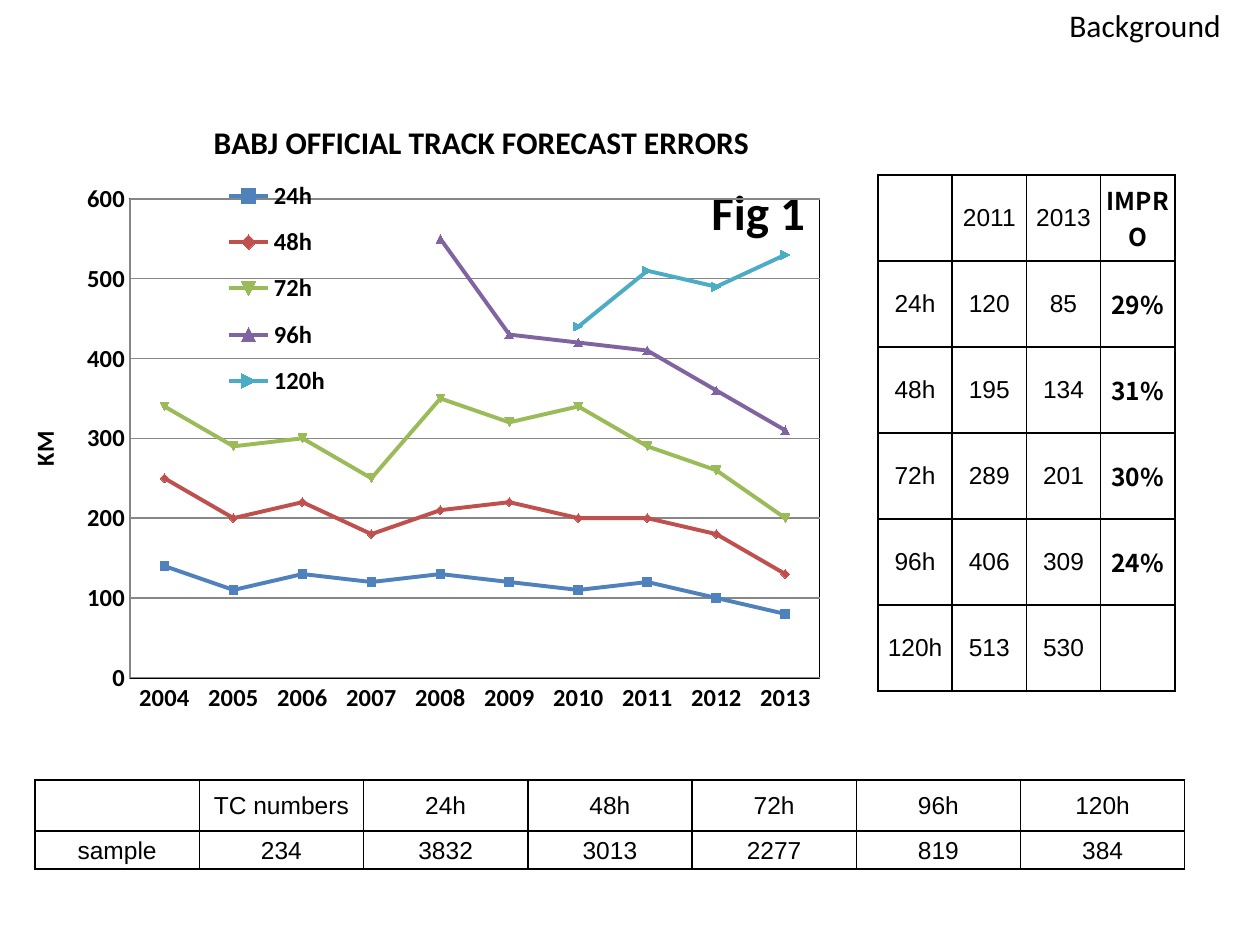
from lxml.etree import SubElement
from pptx import Presentation
from pptx.chart.data import CategoryChartData
from pptx.dml.color import RGBColor
from pptx.enum.chart import XL_CHART_TYPE, XL_LEGEND_POSITION, XL_TICK_MARK
from pptx.enum.text import MSO_ANCHOR, PP_ALIGN
from pptx.oxml import parse_xml
from pptx.oxml.ns import nsdecls, qn
from pptx.util import Inches, Pt

PX = 914400 // 126  # EMU per px
THEME = {
    "black": RGBColor.from_string("000000"),
    "grid": RGBColor.from_string("868686"),
    "series": ["4F81BD", "C0504D", "9BBB59", "8064A2", "4BACC6"],
    "body": "Calibri", "table": "Arial", "strong": "Noto Sans CJK SC",
    "small": 14, "title": 18, "figure": 28,
}


def write(tf, text, size=THEME["small"], font=THEME["body"], bold=False, align=None):
    p = tf.paragraphs[0]
    p.alignment = align
    r = p.add_run()
    r.text = text
    r.font.size = Pt(size)
    r.font.name = font
    r.font.bold = bold
    r.font.color.rgb = THEME["black"]


def add_grid(s, rows, x, y, w, heights, inset=0, strong_col=None):
    n = len(rows[0])
    table = s.shapes.add_table(len(rows), n, x * PX, y * PX, w * PX, sum(heights) * PX).table
    table.first_row = table.horz_banding = False
    for col in table.columns:
        col.width = w * PX // n
    for i, row in enumerate(rows):
        table.rows[i].height = heights[i] * PX
        for j, text in enumerate(row):
            cell = table.cell(i, j)
            cell.margin_left = cell.margin_right = cell.margin_top = inset * PX
            cell.margin_bottom = 0
            cell.vertical_anchor = MSO_ANCHOR.MIDDLE
            tcPr = cell._tc.get_or_add_tcPr()
            for side in ("lnL", "lnR", "lnT", "lnB"):
                ln = SubElement(tcPr, qn("a:" + side), w=str(Pt(1)))
                SubElement(SubElement(ln, qn("a:solidFill")), qn("a:srgbClr"), val=str(THEME["black"]))
            cell.fill.background()
            if text:
                strong = j == strong_col
                write(cell.text_frame, text, bold=strong, align=PP_ALIGN.CENTER,
                      font=THEME["strong"] if strong else THEME["table"])


prs = Presentation()
prs.slide_width, prs.slide_height = Inches(10), Inches(7.5)
s = prs.slides.add_slide(prs.slide_layouts[6])

# Tables
hours = ["24h", "48h", "72h", "96h", "120h"]
add_grid(s, [["", "TC numbers", *hours],
             ["sample", "234", "3832", "3013", "2277", "819", "384"]],
         35, 780, 1150, [51, 38], inset=1)
add_grid(s, [["", "2011", "2013", "IMPRO"],
             ["24h", "120", "85", "29%"],
             ["48h", "195", "134", "31%"],
             ["72h", "289", "201", "30%"],
             ["96h", "406", "309", "24%"],
             ["120h", "513", "530", ""]],
         878, 175, 297, [86] * 6, strong_col=3)

# Section name and figure label
for text, box, size, bold in [("Background", (1057, 0, 203, 50), THEME["title"], False),
                              ("Fig 1", (699, 175, 129, 72), THEME["figure"], True)]:
    tf = s.shapes.add_textbox(*[v * PX for v in box]).text_frame
    tf.word_wrap = True
    write(tf, text, size=size, bold=bold)

# Line chart of track errors
errors = [
    [140, 110, 130, 120, 130, 120, 110, 120, 100, 80],
    [250, 200, 220, 180, 210, 220, 200, 200, 180, 130],
    [340, 290, 300, 250, 350, 320, 340, 290, 260, 200],
    [None] * 4 + [550, 430, 420, 410, 360, 310],
    [None] * 6 + [440, 510, 490, 530],
]
data = CategoryChartData()
data.categories = [str(year) for year in range(2004, 2014)]
for name, values in zip(hours, errors):
    data.add_series(name, values)
chart = s.shapes.add_chart(XL_CHART_TYPE.LINE_MARKERS, 0, 96 * PX, 963 * PX, 630 * PX, data).chart
chart.font.size = Pt(THEME["small"])
chart.font.name = THEME["body"]
chart.font.bold = True
chart.font.color.rgb = THEME["black"]
chart.has_title = True
write(chart.chart_title.text_frame, "BABJ OFFICIAL TRACK FORECAST ERRORS", size=THEME["title"], bold=True)
chart.plots[0].vary_by_categories = False
for series, color in zip(chart.plots[0].series, THEME["series"]):
    rgb = RGBColor.from_string(color)
    series.smooth = False
    series.format.line.width = Pt(2.25)
    series.format.line.color.rgb = rgb
    series.marker.size = 5
    for part in (series.marker.format.fill, series.marker.format.line.fill):
        part.solid()
        part.fore_color.rgb = rgb

# Axes
for axis in (chart.category_axis, chart.value_axis):
    axis.major_tick_mark = axis.minor_tick_mark = XL_TICK_MARK.NONE
    axis.format.line.color.rgb = THEME["grid"]
    axis.tick_labels.font.size = Pt(THEME["small"])
    axis.tick_labels.font.bold = True
value_axis = chart.value_axis
value_axis.minimum_scale, value_axis.maximum_scale, value_axis.major_unit = 0, 600, 100
value_axis.major_gridlines.format.line.color.rgb = THEME["grid"]
write(value_axis.axis_title.text_frame, "KM", bold=True)

# Legend and plot area places in px, turned into shares of the chart
chart.has_legend = True
legend = chart.legend
legend.position = XL_LEGEND_POSITION.RIGHT
legend.include_in_layout = False
legend.font.size = Pt(THEME["small"])
legend.font.bold = True
plot_area = chart._chartSpace.chart.plotArea
for parent, index, target, box in [(plot_area, 0, "inner", (130, 103, 690, 479)),
                                   (legend._element, 1, None, (219, 69, 116, 247))]:
    for old in parent.findall(qn("c:layout")):
        parent.remove(old)
    layout = parse_xml(f"<c:layout {nsdecls('c')}><c:manualLayout/></c:layout>")
    if target:
        SubElement(layout[0], qn("c:layoutTarget"), val=target)
    for tag in ("xMode", "yMode"):
        SubElement(layout[0], qn("c:" + tag), val="edge")
    for tag, value, full in zip("xywh", box, (963, 630, 963, 630)):
        SubElement(layout[0], qn("c:" + tag), val=str(value / full))
    parent.insert(index, layout)

# Clear chart background, black plot frame
frame = parse_xml(f"<c:spPr {nsdecls('c', 'a')}><a:noFill/><a:ln w='9525'><a:solidFill>"
                  f"<a:srgbClr val='{THEME['black']}'/></a:solidFill></a:ln></c:spPr>")
plot_area.append(frame)
chart._chartSpace.chart.addnext(parse_xml(
    f"<c:spPr {nsdecls('c', 'a')}><a:noFill/><a:ln><a:noFill/></a:ln></c:spPr>"))

prs.save("out.pptx")
